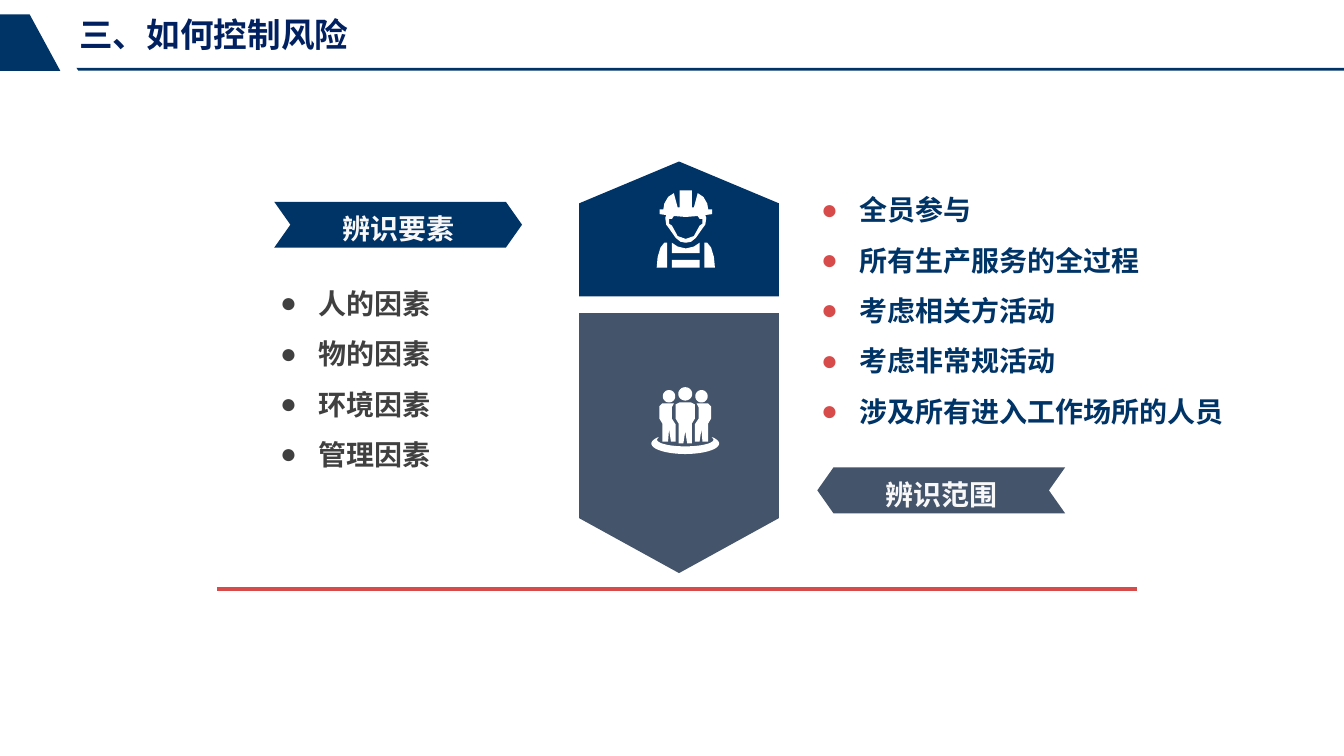
import dataclasses
import math

import lxml.etree
import pptx
import pptx.dml.color
import pptx.enum.shapes
import pptx.enum.text
import pptx.oxml.ns
import pptx.util

ALIGN = pptx.enum.text.PP_ALIGN
ANCHOR = pptx.enum.text.MSO_ANCHOR
COLUMNS, ROWS = 64, 36
ICON_STEPS = 22  # fine icon steps in one grid column or row


@dataclasses.dataclass(frozen=True)
class Theme:
    font: str = "Arial"
    title_size: float = 25.3
    text_size: float = 21.1
    title: str = "002060"
    navy: str = "003366"
    slate: str = "44546A"
    red: str = "D74B4B"
    dark: str = "404040"
    light: str = "F8F8F8"
    white: str = "FFFFFF"


def rgb(color):
    return pptx.dml.color.RGBColor.from_string(color)


def add_bullet(paragraph, color):
    properties = paragraph._p.get_or_add_pPr()
    indent = pptx.util.Inches(0.4)
    properties.set("marL", str(indent))
    properties.set("indent", str(-indent))
    qn = pptx.oxml.ns.qn
    bullet_color = lxml.etree.SubElement(properties, qn("a:buClr"))
    lxml.etree.SubElement(bullet_color, qn("a:srgbClr")).set("val", color)
    lxml.etree.SubElement(properties, qn("a:buFont")).set("typeface", "Arial")
    lxml.etree.SubElement(properties, qn("a:buChar")).set("char", "●")


def write(paragraph, text, *, font, size, color, align=ALIGN.LEFT, spacing=1.0, bullet=None):
    paragraph.alignment = align
    paragraph.line_spacing = spacing
    paragraph.space_before = pptx.util.Pt(0)
    if bullet:
        add_bullet(paragraph, bullet)
    run = paragraph.add_run()
    run.text = text
    run.font.name = font
    run.font.size = pptx.util.Pt(size)
    run.font.bold = True
    run.font.color.rgb = rgb(color)


def mirror(points, width):
    return [(width - x, y) for x, y in reversed(points)]


def arc(center_x, center_y, radius_x, radius_y, start=0, end=360, steps=32):
    """Points along an ellipse, with angles in degrees running clockwise."""
    angles = [math.radians(start + (end - start) * i / steps) for i in range(steps + 1)]
    return [(center_x + radius_x * math.cos(a), center_y + radius_y * math.sin(a))
            for a in angles]


class SlideBuilder:
    """Places elements on a grid of COLUMNS by ROWS cells."""

    def __init__(self, deck, theme):
        self.theme = theme
        self.slide = deck.slides.add_slide(deck.slide_layouts.get_by_name("Two Content"))
        self.column = deck.slide_width / COLUMNS
        self.row = deck.slide_height / ROWS

    def x(self, columns):
        return round(columns * self.column)

    def y(self, rows):
        return round(rows * self.row)

    def paint(self, shape, color):
        shape.shadow.inherit = False
        shape.fill.solid()
        shape.fill.fore_color.rgb = rgb(color)
        shape.line.fill.background()
        return shape

    def placeholder(self, index, left, top, width, height, inset=None):
        holder = self.slide.placeholders[index]
        holder.left, holder.top = self.x(left), self.y(top)
        holder.width, holder.height = self.x(width), self.y(height)
        frame = holder.text_frame
        frame.auto_size = pptx.enum.text.MSO_AUTO_SIZE.NONE
        frame.word_wrap = True
        frame.vertical_anchor = ANCHOR.TOP
        if inset is not None:
            frame.margin_left = frame.margin_right = inset
            frame.margin_top = frame.margin_bottom = inset
        return frame

    def title(self, text, *box):
        frame = self.placeholder(0, *box, inset=0)
        write(frame.paragraphs[0], text, font=self.theme.font,
              size=self.theme.title_size, color=self.theme.title)

    def bullets(self, index, items, *box, color, bullet):
        frame = self.placeholder(index, *box)
        for number, item in enumerate(items):
            paragraph = frame.add_paragraph() if number else frame.paragraphs[0]
            write(paragraph, item, font=self.theme.font, size=self.theme.text_size,
                  color=color, spacing=1.5, bullet=bullet)

    def outline(self, contours, color):
        """One freeform; a contour inside another cuts a hole."""
        placed = [[(self.x(x), self.y(y)) for x, y in contour] for contour in contours]
        builder = self.slide.shapes.build_freeform(*placed[0][0])
        for number, (start, *rest) in enumerate(placed):
            if number:
                builder.move_to(*start)
            builder.add_line_segments(rest, close=True)
        return self.paint(builder.convert_to_shape(), color)

    def icon(self, contours, left, top):
        self.outline([[(left + x / ICON_STEPS, top + y / ICON_STEPS) for x, y in contour]
                      for contour in contours], self.theme.white)

    def plate(self, left, top, width, height, color, rotation, point):
        """A pentagon arrow turned upright inside the given box."""
        long, short = self.y(height), self.x(width)
        shift = (long - short) // 2
        shape = self.slide.shapes.add_shape(
            pptx.enum.shapes.MSO_SHAPE.PENTAGON,
            self.x(left) - shift, self.y(top) + shift, long, short)
        shape.rotation = rotation
        shape.adjustments[0] = point
        self.paint(shape, color)

    def banner(self, text, left, top, color, flip=False):
        width, height, notch = 11.8, 2.18, 0.77
        ribbon = [(0, 0), (width - notch, 0), (width, height / 2),
                  (width - notch, height), (0, height), (notch, height / 2)]
        if flip:
            ribbon = mirror(ribbon, width)
        shape = self.outline([[(left + x, top + y) for x, y in ribbon]], color)
        frame = shape.text_frame
        frame.word_wrap = True
        frame.vertical_anchor = ANCHOR.MIDDLE
        frame.margin_left = frame.margin_right = frame.margin_bottom = 0
        frame.margin_top = pptx.util.Inches(0.08)
        write(frame.paragraphs[0], text, font=self.theme.font, size=self.theme.text_size,
              color=self.theme.light, align=ALIGN.CENTER)

    def rule(self, left, right, row, color, weight):
        line = self.slide.shapes.add_connector(
            pptx.enum.shapes.MSO_CONNECTOR.STRAIGHT,
            self.x(left), self.y(row), self.x(right), self.y(row))
        line.line.color.rgb = rgb(color)
        line.line.width = pptx.util.Pt(weight)
        lxml.etree.SubElement(line.element.spPr, pptx.oxml.ns.qn("a:effectLst"))


def worker_contours():
    width = 61
    helmet = [(24, 0), (24, 18), (22, 18), (18, 3), (12, 7), (8, 14), (7, 20), (3, 20),
              (3, 25), (10, 26), (9, 29), (10, 36), (13, 40), (20, 50), (25, 54), (30.5, 55)]
    face = [(30.5, 28), (18, 27), (16, 30), (13, 30), (13, 35), (16, 37), (22, 48), (30.5, 51)]
    sleeve = [(8, 55), (11, 55), (11, 81), (0, 81), (1, 70), (4, 60)]
    vest = [(30.5, 61), (22, 59), (16, 55), (16, 66)]
    belt = [(16, 73), (16, 81)]
    return [half + mirror(half, width) for half in (helmet, face, vest, belt)] + [
        sleeve, mirror(sleeve, width)]


def team_contours():
    width = 70
    platform = arc(35, 59, 35.5, 11, -35, 215) + arc(35, 55, 29.5, 7, 200, -20)
    leader = [(29, 16), (25, 18), (25, 33), (28, 38), (28, 59), (33, 59), (35, 46)]
    member = [(11, 17), (8, 20), (8, 33), (11, 38), (11, 57), (17, 57), (18, 44),
              (20, 57), (25, 57), (25, 39), (21, 33), (21, 21), (23, 17)]
    head = arc(18, 9.5, 6.5, 6.5)
    return [platform, arc(35, 7, 7.3, 7), leader + mirror(leader, width),
            head, mirror(head, width), member, mirror(member, width)]


def main():
    deck = pptx.Presentation()
    deck.slide_width = pptx.util.Inches(14.06)
    deck.slide_height = pptx.util.Inches(7.91)
    theme = Theme()
    page = SlideBuilder(deck, theme)

    page.title("三、如何控制风险", 3.78, 0.68, 20.67, 1.96)
    page.outline([[(3.64, 3.23), (64, 3.23), (64, 3.37), (3.73, 3.37)]], theme.navy)
    page.outline([[(0, 0.68), (1.41, 0.68), (2.87, 3.37), (0, 3.37)]], theme.navy)

    page.plate(27.58, 7.69, 9.51, 6.42, theme.navy, rotation=270, point=0.31)
    page.plate(27.58, 14.91, 9.51, 12.38, theme.slate, rotation=90, point=0.275)
    page.icon(worker_contours(), 31.27, 9.06)
    page.icon(team_contours(), 31.04, 18.44)

    page.banner("辨识要素", 13.06, 9.61, theme.navy)
    page.bullets(1, ["人的因素", "物的因素", "环境因素", "管理因素"],
                 12.88, 12.61, 11.83, 11.79, color=theme.dark, bullet=theme.dark)
    page.bullets(2, ["全员参与", "所有生产服务的全过程", "考虑相关方活动",
                     "考虑非常规活动", "涉及所有进入工作场所的人员"],
                 38.65, 8.15, 20.89, 12.29, color=theme.navy, bullet=theme.red)
    page.banner("辨识范围", 38.92, 22.26, theme.slate, flip=True)
    page.rule(10.33, 54.12, 28.04, theme.red, weight=3)
    deck.save("out.pptx")


if __name__ == "__main__":
    main()
